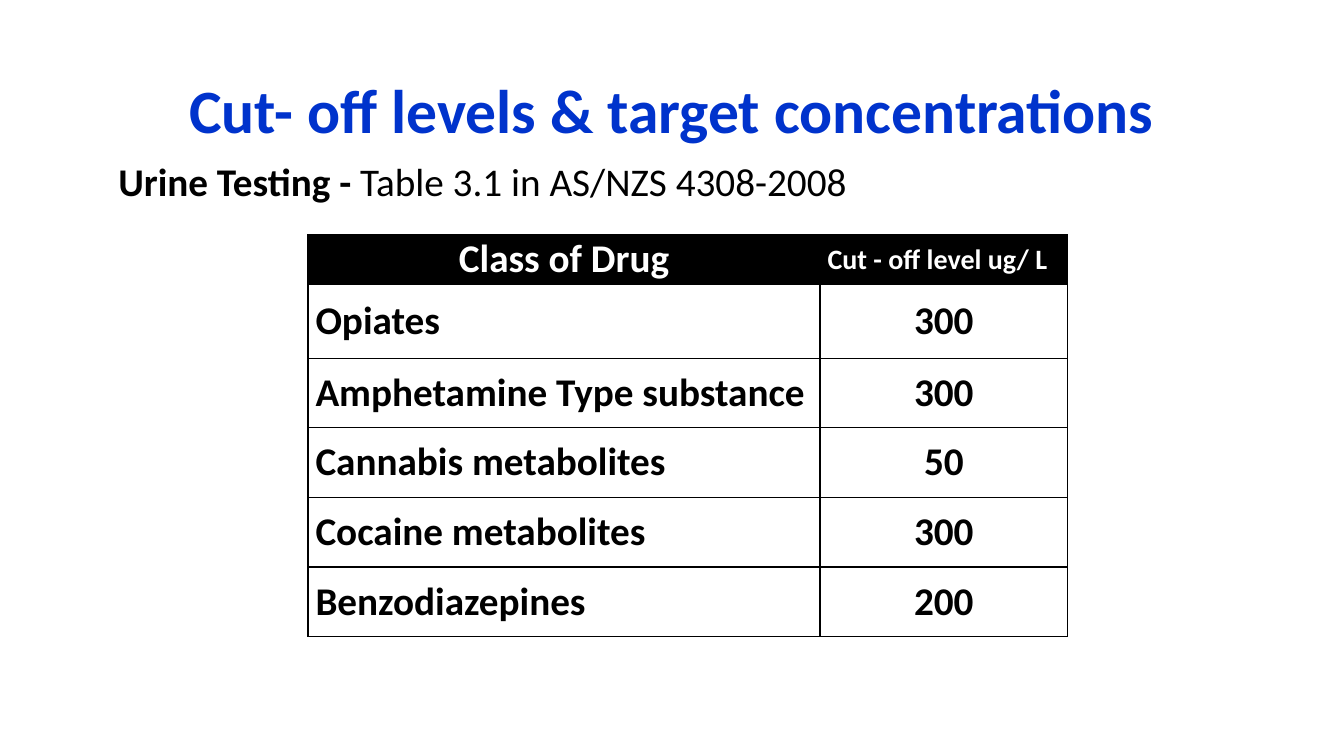
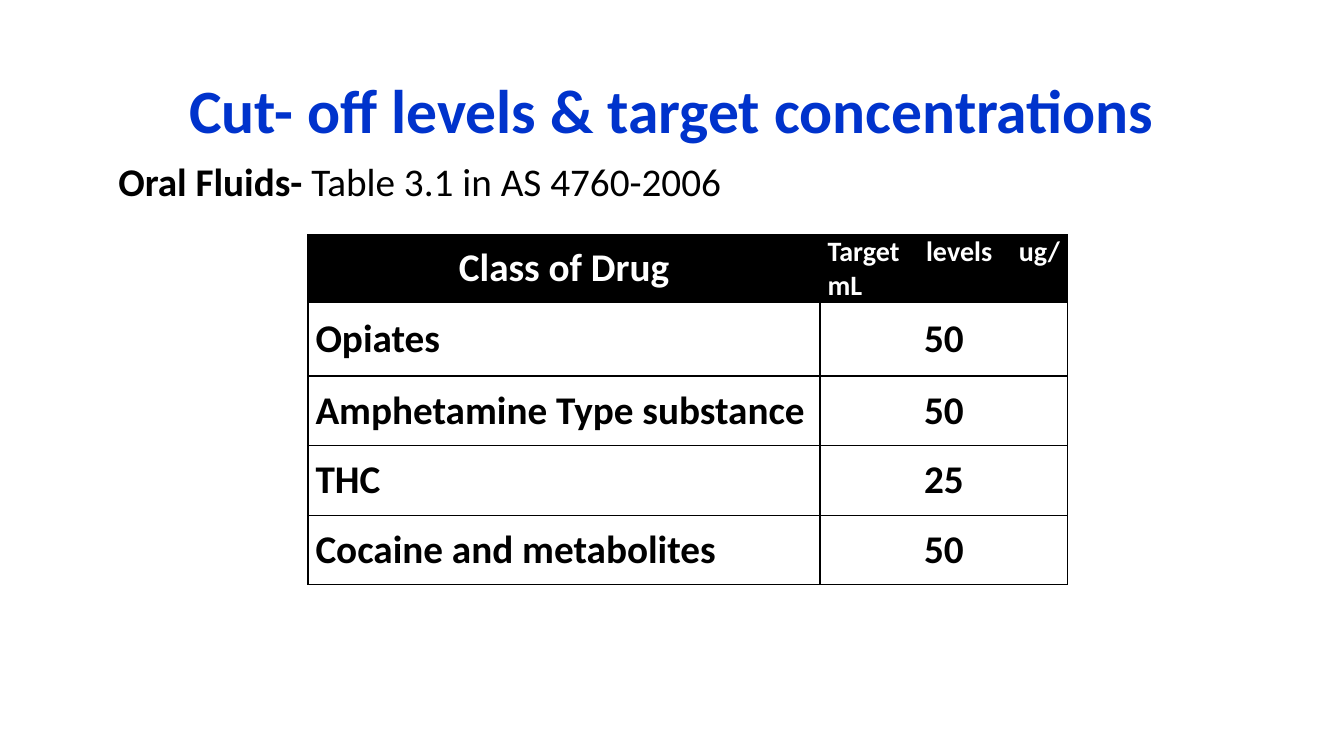
import pptx
import pptx.dml.color
import pptx.enum.text
import pptx.oxml
import pptx.oxml.ns
import pptx.util

Pt = pptx.util.Pt
RGBColor = pptx.dml.color.RGBColor
ALIGN = pptx.enum.text.PP_ALIGN
MIDDLE = pptx.enum.text.MSO_ANCHOR.MIDDLE

# Content
TITLE = "Cut- off levels & target concentrations"
SLIDES = [
    {
        "subtitle": ("Urine Testing - ", "Table 3.1 in AS/NZS 4308-2008"),
        "header": ("Class of Drug", "Cut - off level ug/ L"),
        "rows": [
            ("Opiates", "300"),
            ("Amphetamine Type substance", "300"),
            ("Cannabis metabolites", "50"),
            ("Cocaine metabolites", "300"),
            ("Benzodiazepines", "200"),
        ],
    },
    {
        "subtitle": ("Oral Fluids- ", "Table 3.1 in AS 4760-2006"),
        "header": ("Class of Drug", "Target levels ug/ mL"),
        "rows": [
            ("Opiates", "50"),
            ("Amphetamine Type substance", "50"),
            ("THC", "25"),
            ("Cocaine and metabolites", "50"),
        ],
    },
]

# Shared style, lengths in points
FONT = "Calibri"
BLUE = RGBColor(0x00, 0x33, 0xCC)
BLACK = RGBColor(0x00, 0x00, 0x00)
WHITE = RGBColor(0xFF, 0xFF, 0xFF)
TITLE_SIZE, TEXT_SIZE, UNIT_SIZE = 44, 28, 20
TITLE_BOX = (66, 28.8, 828, 104.4)
SUBTITLE_BOX = (77.5, 115.2, 828, 36)
TABLE_LEFT, TABLE_TOP = 220, 167.8
COLUMN_WIDTHS = (365.8, 176.8)
HEADER_HEIGHT, FIRST_HEIGHT, ROW_HEIGHT = 35.3, 52.8, 49.7
CELL_MARGIN = 5.4
BORDER_WIDTH = 1


def style(font, size, color, bold=True):
    font.name, font.size, font.bold = FONT, Pt(size), bold
    font.color.rgb = color


def add_text(slide, box, parts, size, color, spacing):
    """Add a text box of one paragraph; parts are (text, bold) pairs."""
    tf = slide.shapes.add_textbox(*map(Pt, box)).text_frame
    tf.word_wrap = True
    p = tf.paragraphs[0]
    p.line_spacing = spacing
    for text, bold in parts:
        r = p.add_run()
        r.text = text
        style(r.font, size, color, bold)
    return tf


def add_borders(cell):
    tc_pr = cell._tc.get_or_add_tcPr()
    for side in ("lnL", "lnR", "lnT", "lnB"):
        tc_pr.append(pptx.oxml.parse_xml(
            f'<a:{side} {pptx.oxml.ns.nsdecls("a")} w="{Pt(BORDER_WIDTH)}">'
            f'<a:solidFill><a:srgbClr val="{BLACK}"/></a:solidFill></a:{side}>'))


def fill_cell(cell, text, size, color, align, fill=None):
    cell.margin_left = cell.margin_right = Pt(CELL_MARGIN)
    cell.margin_top = cell.margin_bottom = 0
    cell.vertical_anchor = MIDDLE
    add_borders(cell)
    if fill is None:
        cell.fill.background()
    else:
        cell.fill.solid()
        cell.fill.fore_color.rgb = fill
    p = cell.text_frame.paragraphs[0]
    p.text = text
    p.alignment = align
    style(p.runs[0].font, size, color)


def add_drug_table(slide, header, rows):
    heights = [HEADER_HEIGHT, FIRST_HEIGHT] + [ROW_HEIGHT] * (len(rows) - 1)
    table = slide.shapes.add_table(
        len(heights), len(COLUMN_WIDTHS), Pt(TABLE_LEFT), Pt(TABLE_TOP),
        Pt(sum(COLUMN_WIDTHS)), Pt(sum(heights))).table
    table.first_row = table.horz_banding = False
    for column, width in zip(table.columns, COLUMN_WIDTHS):
        column.width = Pt(width)
    for row, height in zip(table.rows, heights):
        row.height = Pt(height)

    # Header row
    fill_cell(table.cell(0, 0), header[0], TEXT_SIZE, WHITE, ALIGN.CENTER, BLACK)
    fill_cell(table.cell(0, 1), header[1], UNIT_SIZE, WHITE, ALIGN.JUSTIFY, BLACK)
    # Drug rows
    for i, (drug, level) in enumerate(rows, start=1):
        fill_cell(table.cell(i, 0), drug, TEXT_SIZE, BLACK, ALIGN.JUSTIFY)
        fill_cell(table.cell(i, 1), level, TEXT_SIZE, BLACK, ALIGN.CENTER)


def main():
    prs = pptx.Presentation()
    prs.slide_width, prs.slide_height = Pt(960), Pt(540)
    for content in SLIDES:
        slide = prs.slides.add_slide(prs.slide_layouts[6])
        # Title
        tf = add_text(slide, TITLE_BOX, [(TITLE, True)], TITLE_SIZE, BLUE, 0.9)
        tf.vertical_anchor = MIDDLE
        tf.paragraphs[0].alignment = ALIGN.CENTER
        # Subtitle: bold test name, then its source
        name, reference = content["subtitle"]
        add_text(slide, SUBTITLE_BOX, [(name, True), (reference, False)],
                 TEXT_SIZE, BLACK, 0.8)
        add_drug_table(slide, content["header"], content["rows"])
    prs.save("out.pptx")


if __name__ == "__main__":
    main()
